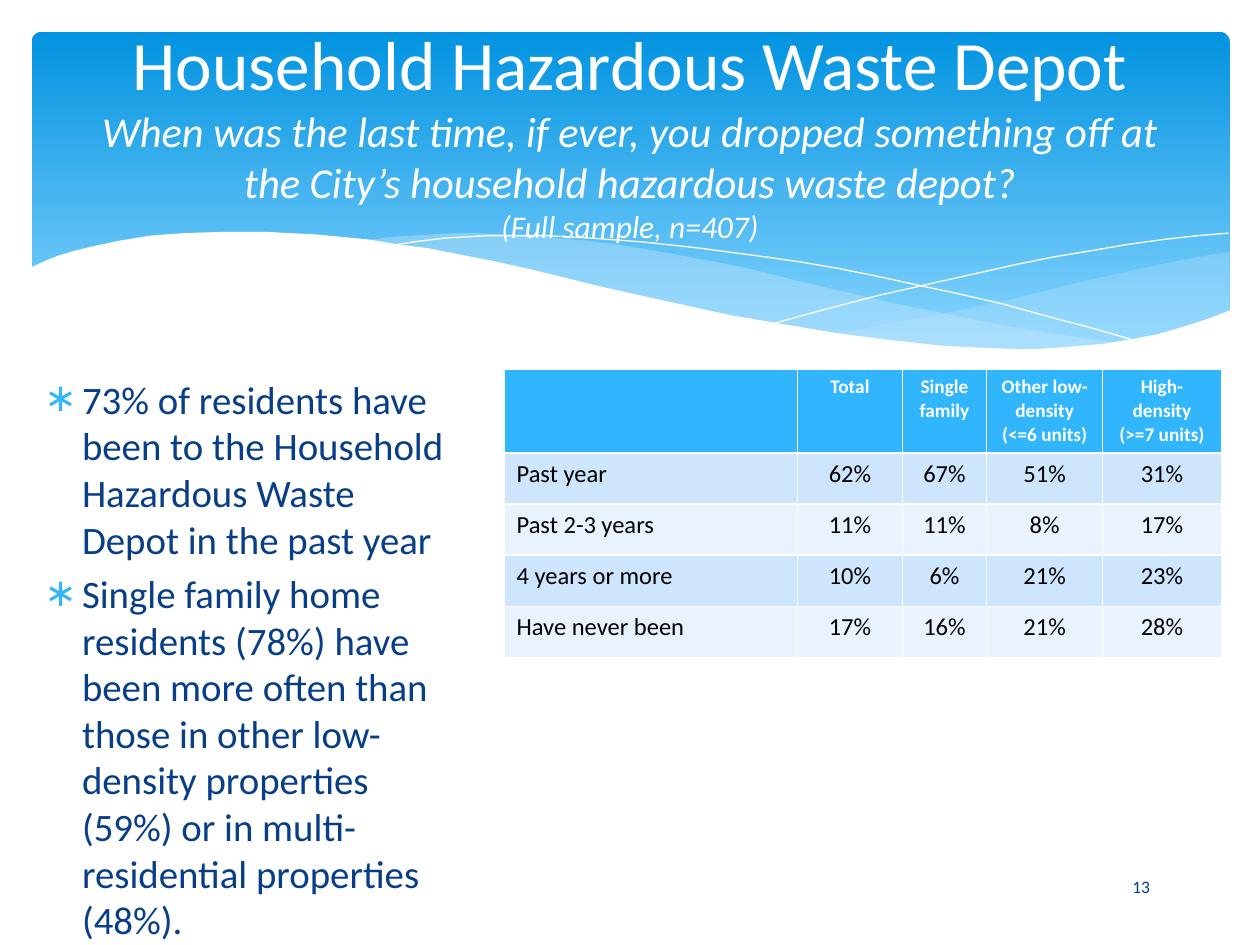
import copy

import pptx
import pptx.dml.color
import pptx.enum.shapes
import pptx.enum.text
import pptx.oxml
import pptx.oxml.ns
import pptx.util

Cm = pptx.util.Cm
Pt = pptx.util.Pt
CENTER = pptx.enum.text.PP_ALIGN.CENTER
LEFT = pptx.enum.text.PP_ALIGN.LEFT
MIDDLE = pptx.enum.text.MSO_ANCHOR.MIDDLE
TOP = pptx.enum.text.MSO_ANCHOR.TOP
FONT, WHITE, NAVY, SKY = "Calibri", "FFFFFF", "073E87", "31B6FD"

# Wave outlines, in units of 0.0254 cm
UNIT = Cm(0.0254)
RIGHT_WAVE = [
    (976, 200), (962, 202), (935, 207), (906, 213), (861, 223), (805, 237),
    (753, 248), (706, 257), (661, 265), (691, 269), (719, 272), (745, 275),
    (769, 277), (803, 278), (835, 277), (863, 275), (889, 272), (913, 267),
    (935, 262), (949, 257), (963, 252), (976, 247)]
MIDDLE_WAVE = [
    (893, 273), (866, 269), (837, 265), (807, 260), (775, 254), (741, 247),
    (706, 240), (668, 231), (629, 222), (598, 214), (569, 208), (541, 203),
    (514, 198), (489, 194), (465, 191), (442, 189), (420, 187), (399, 186),
    (380, 185), (361, 185), (344, 186), (313, 188), (286, 191), (323, 196),
    (362, 203), (404, 211), (449, 222), (491, 232), (530, 240), (566, 248),
    (601, 255), (634, 261), (665, 266), (695, 270), (722, 274), (748, 276),
    (773, 277), (796, 278), (828, 278), (857, 277), (876, 275)]
LONG_LINE = [
    (309, 195), (328, 192), (353, 189), (387, 187), (433, 187), (469, 189),
    (510, 192), (556, 197), (608, 204), (636, 208), (665, 213), (695, 219),
    (727, 226), (760, 233), (795, 241), (831, 251), (869, 261), (907, 272)]
SHORT_LINE = [
    (613, 257), (653, 246), (695, 235), (748, 223), (806, 210), (836, 204),
    (866, 199), (895, 194), (924, 190), (951, 187), (975, 185)]
WHITE_WAVE = [
    (977, 246), (959, 253), (940, 259), (920, 265), (899, 269), (875, 273),
    (850, 275), (823, 277), (809, 277), (778, 276), (744, 274), (708, 270),
    (668, 265), (626, 258), (579, 250), (529, 239), (475, 227), (447, 220),
    (418, 213), (391, 207), (365, 202), (340, 197), (316, 194), (292, 190),
    (271, 188), (250, 186), (230, 185), (211, 184), (177, 184), (146, 185),
    (119, 187), (95, 191), (76, 195), (59, 199), (46, 203), (36, 207),
    (23, 213), (23, 329), (977, 329)]

TITLE = [
    ("Household Hazardous Waste Depot", 39.6, False),
    ("When was the last time, if ever, you dropped something off at "
     "the City’s household hazardous waste depot?", 24.3, True),
    ("(Full sample, n=407)", 18, True)]
BULLETS = [
    "73% of residents have been to the Household Hazardous Waste Depot "
    "in the past year",
    "Single family home residents (78%) have been more often than those in "
    "other low-density properties (59%) or in multi-residential properties "
    "(48%)."]
TABLE = [
    ["", "Total", "Single family", "Other low-density\n(<=6 units)",
     "High-density (>=7 units)"],
    ["Past year", "62%", "67%", "51%", "31%"],
    ["Past 2-3 years", "11%", "11%", "8%", "17%"],
    ["4 years or more", "10%", "6%", "21%", "23%"],
    ["Have never been", "17%", "16%", "21%", "28%"]]
COLUMN_WIDTHS = [5.92, 2.11, 1.7, 2.34, 2.39]
HEADER_HEIGHT, ROW_HEIGHT = 1.66, 1.03


def rgb(value):
    return pptx.dml.color.RGBColor.from_string(value)


def format_run(r, size, color, bold=False, italic=False):
    r.font.name = FONT
    r.font.size = Pt(size)
    r.font.bold = bold
    r.font.italic = italic
    r.font.color.rgb = rgb(color)


def place(sp, left, top, width, height, anchor):
    sp.left, sp.top = Cm(left), Cm(top)
    sp.width, sp.height = Cm(width), Cm(height)
    tf = sp.text_frame
    tf.word_wrap = True
    tf.auto_size = pptx.enum.text.MSO_AUTO_SIZE.NONE
    tf.vertical_anchor = anchor
    return tf


def add_banner(s):
    sp = s.shapes.add_shape(pptx.enum.shapes.MSO_SHAPE.ROUNDED_RECTANGLE,
                            Cm(0.64), Cm(0.64), Cm(24.15), Cm(6.86))
    sp.adjustments[0] = 0.03
    sp.shadow.inherit = False
    sp.line.fill.background()
    sp.fill.gradient()
    sp.fill.gradient_angle = 270
    stops = [(0, "0293E0"), (0.9, "83D3FE")]
    for stop, (position, color) in zip(sp.fill.gradient_stops, stops):
        stop.position = position
        stop.color.rgb = rgb(color)


def add_outline(s, points, closed):
    builder = s.shapes.build_freeform(*points[0], scale=UNIT)
    builder.add_line_segments(points[1:], close=closed)
    sp = builder.convert_to_shape()
    sp.shadow.inherit = False
    return sp


def add_wave(s, points, color, opacity=100):
    sp = add_outline(s, points, True)
    sp.line.fill.background()
    sp.fill.solid()
    sp.fill.fore_color.rgb = rgb(color)
    if opacity < 100:
        clr = sp.element.spPr.find(".//" + pptx.oxml.ns.qn("a:srgbClr"))
        alpha = pptx.oxml.parse_xml(
            f'<a:alpha {pptx.oxml.ns.nsdecls("a")} val="{opacity * 1000}"/>')
        clr.append(alpha)


def add_wave_line(s, points):
    sp = add_outline(s, points, False)
    sp.fill.background()
    sp.line.color.rgb = rgb(WHITE)
    sp.line.width = Pt(0)


def fill_title(sp):
    tf = place(sp, 1.27, 0.94, 22.86, 3.48, MIDDLE)
    tf.text = "\v".join(text for text, _, _ in TITLE)
    p = tf.paragraphs[0]
    p.alignment = CENTER
    for r, (_, size, italic) in zip(p.runs, TITLE):
        format_run(r, size, WHITE, italic=italic)
    # Each line break takes the size of the line it ends
    for r, br in zip(p.runs, p._p.findall(pptx.oxml.ns.qn("a:br"))):
        br.append(copy.deepcopy(r.font._element))


def add_bullet(p):
    pPr = p._p.get_or_add_pPr()
    pPr.set("marL", str(Cm(0.76)))
    pPr.set("indent", str(-Cm(0.76)))
    ns = pptx.oxml.ns.nsdecls("a")
    for xml in (f'<a:buClr {ns}><a:srgbClr val="{SKY}"/></a:buClr>',
                f'<a:buFont {ns} typeface="{FONT}"/>',
                f'<a:buChar {ns} char="∗"/>'):
        pPr.append(pptx.oxml.parse_xml(xml))


def fill_body(sp):
    tf = place(sp, 0.64, 7.44, 8.89, 9.58, TOP)
    tf.text = "\n".join(BULLETS)
    for i, p in enumerate(tf.paragraphs):
        add_bullet(p)
        p.alignment = LEFT
        p.space_before = Pt(4.4 if i else 0)
        format_run(p.runs[0], 22.2, NAVY)


def add_page_number(s):
    sp = s.shapes.add_textbox(0, 0, 0, 0)
    tf = place(sp, 21.39, 17.37, 3.23, 1.02, MIDDLE)
    tf.text = "13"
    p = tf.paragraphs[0]
    p.alignment = CENTER
    format_run(p.runs[0], 10, NAVY)


def add_results_table(s):
    height = HEADER_HEIGHT + ROW_HEIGHT * (len(TABLE) - 1)
    table = s.shapes.add_table(len(TABLE), len(COLUMN_WIDTHS), Cm(10.16), Cm(7.44),
                               Cm(sum(COLUMN_WIDTHS)), Cm(height)).table
    for column, width in zip(table.columns, COLUMN_WIDTHS):
        column.width = Cm(width)
    for i, row in enumerate(TABLE):
        header = i == 0
        table.rows[i].height = Cm(HEADER_HEIGHT if header else ROW_HEIGHT)
        fill = SKY if header else ("E8F3FF", "CEE5FE")[i % 2]
        for j, text in enumerate(row):
            cell = table.cell(i, j)
            cell.fill.solid()
            cell.fill.fore_color.rgb = rgb(fill)
            cell.text_frame.text = text
            for p in cell.text_frame.paragraphs:
                p.alignment = CENTER if j else LEFT
                for r in p.runs:
                    format_run(r, 11 if header else 14,
                               WHITE if header else "000000", bold=header)


def main():
    prs = pptx.Presentation()
    prs.slide_width, prs.slide_height = Cm(25.4), Cm(19.05)
    s = prs.slides.add_slide(prs.slide_layouts[1])
    title, body = s.shapes.title, s.placeholders[1]

    # Banner and waves
    add_banner(s)
    add_wave(s, RIGHT_WAVE, "C6E7FC", 29)
    add_wave(s, MIDDLE_WAVE, "C6E7FC", 40)
    add_wave_line(s, LONG_LINE)
    add_wave_line(s, SHORT_LINE)
    add_wave(s, WHITE_WAVE, WHITE)

    # Text, brought in front of the banner
    for sp in (title, body):
        sp.element.getparent().append(sp.element)
    fill_title(title)
    fill_body(body)
    add_page_number(s)

    # Results by type of home
    add_results_table(s)
    prs.save("out.pptx")


if __name__ == "__main__":
    main()
